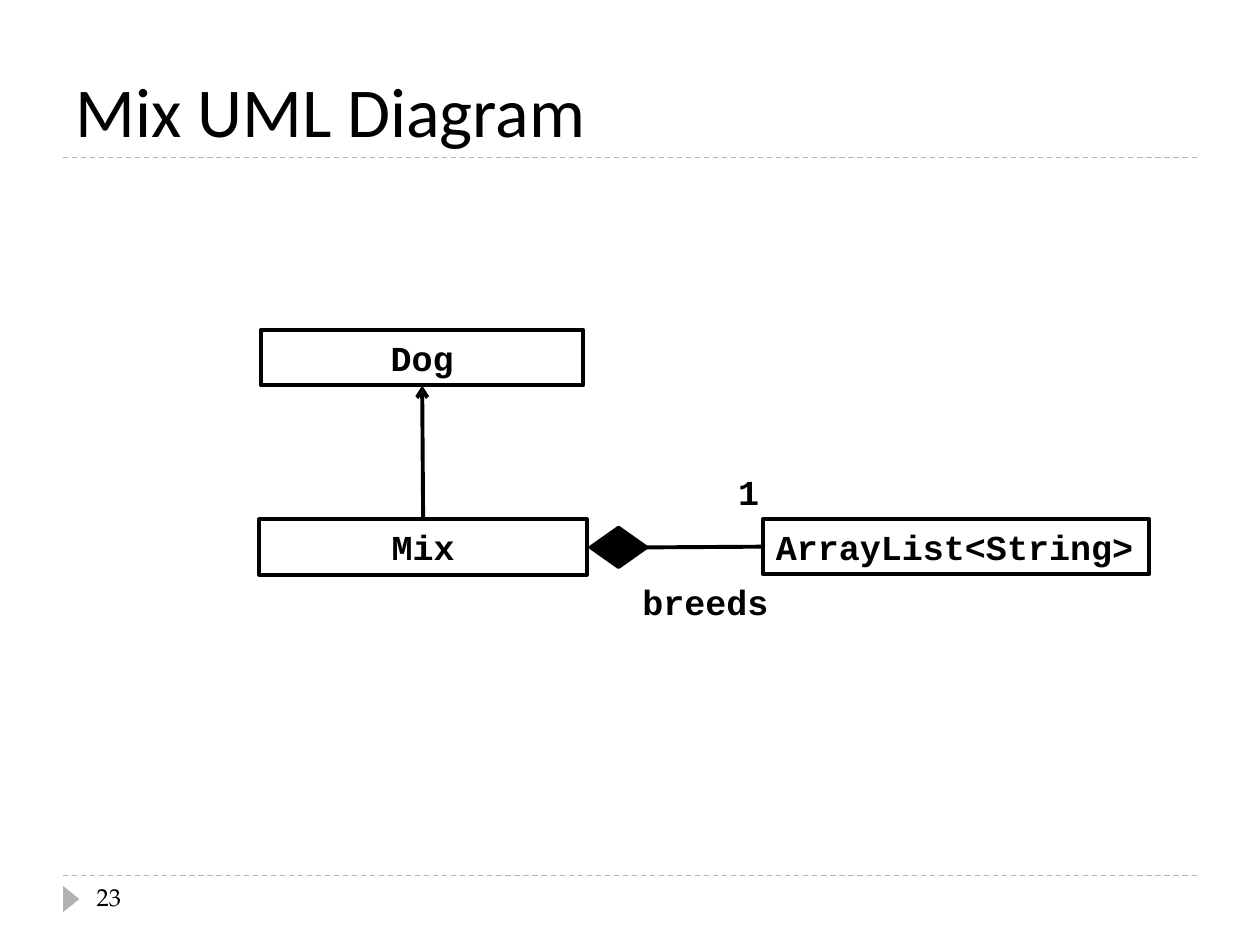
from dataclasses import dataclass

from lxml import etree
from pptx import Presentation
from pptx import util as u
from pptx.dml.color import RGBColor
from pptx.enum import dml, shapes, text
from pptx.oxml.ns import qn


@dataclass(frozen=True)
class Theme:
    """Colours, fonts and sizes of the slide."""
    ink: RGBColor = RGBColor(0, 0, 0)
    rule: RGBColor = RGBColor(0xB2, 0xB2, 0xB2)
    title_font: str = "Calibri"
    code_font: str = "Courier New"
    number_font: str = "TeX Gyre Pagella"
    title_size: int = 40
    code_size: int = 20
    number_size: int = 14
    line: float = 2.25
    hairline: float = 0.75


T = Theme()
BOX_H = 1.12


def place(sp, left, top, width, height):
    """Set the position and size of a shape in centimetres."""
    sp.left, sp.top, sp.width, sp.height = map(u.Cm, (left, top, width, height))


def write(sp, words, font=T.code_font, size=T.code_size, bold=True,
          align=text.PP_ALIGN.LEFT, anchor=text.MSO_ANCHOR.TOP, wrap=False):
    """Put formatted text into a shape."""
    tf = sp.text_frame
    tf.word_wrap = wrap
    tf.auto_size = text.MSO_AUTO_SIZE.NONE
    tf.vertical_anchor = anchor
    p = tf.paragraphs[0]
    p.alignment = align
    r = p.add_run()
    r.text = words
    r.font.name, r.font.size, r.font.bold = font, u.Pt(size), bold
    r.font.color.rgb = T.ink


def add_label(s, words, left, top, width, height=BOX_H, **fmt):
    """Add a text box."""
    sp = s.shapes.add_textbox(*map(u.Cm, (left, top, width, height)))
    write(sp, words, **fmt)


def add_figure(s, kind, left, top, width, height, fill=None, line=None):
    """Add a preset shape with optional fill and outline."""
    sp = s.shapes.add_shape(kind, *map(u.Cm, (left, top, width, height)))
    sp.shadow.inherit = False
    for paint, color in ((sp.fill, fill), (sp.line.fill, line)):
        if color is None:
            paint.background()
        else:
            paint.solid()
            paint.fore_color.rgb = color
    if line is not None:
        sp.line.width = u.Pt(T.line)
    return sp


def add_class(s, name, left, top, width, align=text.PP_ALIGN.CENTER):
    """Add a UML class box."""
    sp = add_figure(s, shapes.MSO_SHAPE.RECTANGLE, left, top, width, BOX_H, line=T.ink)
    write(sp, name, align=align)
    return sp


def add_line(s, ends=(0, 0, 0, 0), color=T.ink, width=T.line):
    """Add a straight connector without shadow."""
    c = s.shapes.add_connector(shapes.MSO_CONNECTOR.STRAIGHT, *map(u.Cm, ends))
    c.line.color.rgb = color
    c.line.width = u.Pt(width)
    etree.SubElement(c._element.spPr, qn("a:effectLst"))
    return c


def join(s, start, start_side, end, end_side, arrow=False):
    """Connect two shapes, with an optional open arrow at the start."""
    c = add_line(s)
    c.begin_connect(start, start_side)
    c.end_connect(end, end_side)
    if arrow:
        etree.SubElement(c.line._get_or_add_ln(), qn("a:headEnd"), type="arrow")


def add_frame(s):
    """Add the title, the dashed rules and the slide number."""
    for y in (17.65, 3.18):
        c = add_line(s, (1.27, y, 24.13, y), T.rule, T.hairline)
        c.line.dash_style = dml.MSO_LINE.DASH
    marker = add_figure(s, shapes.MSO_SHAPE.ISOSCELES_TRIANGLE,
                        1.17, 17.96, 0.53, 0.33, fill=T.rule)
    marker.rotation = 90
    place(s.shapes.title, 1.27, 0.64, 22.86, 2.54)
    write(s.shapes.title, "Mix UML Diagram", font=T.title_font, size=T.title_size,
          bold=False, anchor=text.MSO_ANCHOR.BOTTOM, wrap=True)
    add_label(s, "23", 1.7, 17.65, 5.51, 1.02, font=T.number_font,
              size=T.number_size, bold=False, wrap=True)


def add_diagram(s):
    """Add the classes and their relations."""
    dog = add_class(s, "Dog", 5.26, 6.65, 6.5)
    mix = add_class(s, "Mix", 5.23, 10.47, 6.6)
    breeds = add_class(s, "ArrayList<String>", 15.39, 10.46, 7.77,
                       align=text.PP_ALIGN.LEFT)
    diamond = add_figure(s, shapes.MSO_SHAPE.DIAMOND, 11.91, 10.64, 1.12, 0.79,
                         fill=T.ink, line=T.ink)
    join(s, dog, 2, mix, 0, arrow=True)
    join(s, diamond, 3, breeds, 1)
    add_label(s, "1", 14.63, 9.37, 0.94)
    add_label(s, "breeds", 12.7, 11.58, 3.07)


def main():
    """Build and save the slide."""
    prs = Presentation()
    prs.slide_width, prs.slide_height = u.Cm(25.4), u.Cm(19.05)
    s = prs.slides.add_slide(prs.slide_layouts[5])
    add_frame(s)
    add_diagram(s)
    prs.save("out.pptx")


if __name__ == "__main__":
    main()
